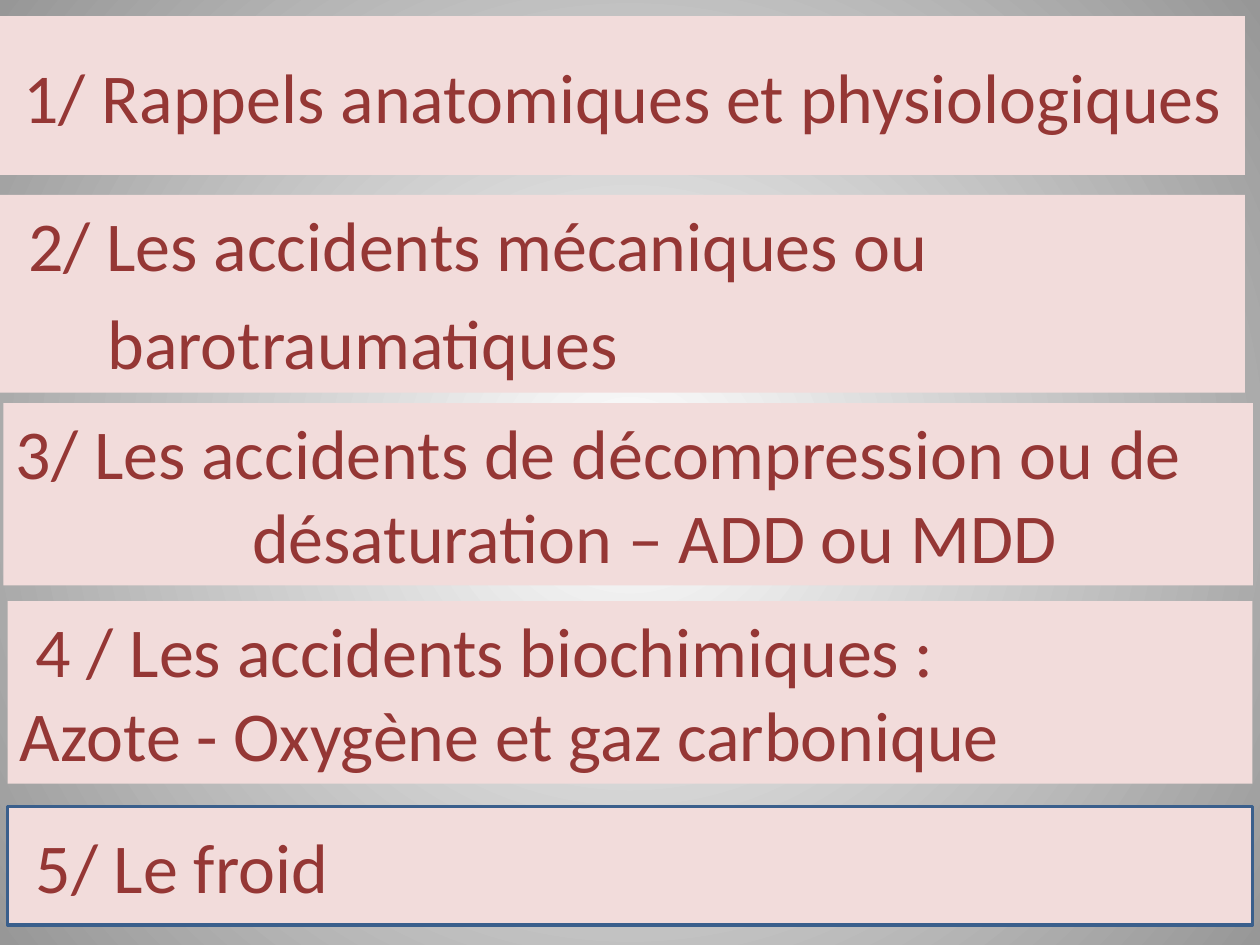
from lxml.etree import SubElement
from pptx import Presentation
from pptx.dml.color import RGBColor
from pptx.enum.shapes import MSO_SHAPE as SHAPE
from pptx.enum.text import MSO_ANCHOR as ANCHOR, PP_ALIGN as ALIGN
from pptx.oxml.ns import qn
from pptx.util import Pt

PINK, RED, BLUE = "F2DCDB", "953735", "3A5F8C"
BACKGROUND = [(0, "FFFFFF"), (1, "979797")]
TOP, MIDDLE = ANCHOR.TOP, ANCHOR.MIDDLE
LEFT, CENTER = ALIGN.LEFT, ALIGN.CENTER

# box, anchor, alignment, gap between lines, outline, [(indent, line)]
CHAPTERS = [
    ((0, 9.2, 711.4, 90.7), MIDDLE, CENTER, 0, None,
     [(0, "1/ Rappels anatomiques et physiologiques")]),
    ((0, 111.4, 711.4, 113), TOP, LEFT, 8, None,
     [(9, "2/ Les accidents mécaniques ou"), (54.3, "barotraumatiques")]),
    ((2, 230.4, 714, 104.2), TOP, LEFT, 0, None,
     [(0, "3/ Les accidents de décompression ou de"),
      (135, "désaturation – ADD ou MDD")]),
    ((4.3, 343.6, 711.4, 104.2), TOP, LEFT, 0, None,
     [(9, "4 / Les accidents biochimiques :"),
      (0, "Azote - Oxygène et gaz carbonique")]),
    ((4.3, 460.8, 711.4, 67.7), MIDDLE, LEFT, 0, BLUE, [(9, "5/ Le froid")]),
]


def color(value):
    return RGBColor.from_string(value)


def paint_background(s):
    fill = s.background.fill
    fill.gradient()
    for stop, (position, value) in zip(fill.gradient_stops, BACKGROUND):
        stop.position = position
        stop.color.rgb = color(value)
    grad = s.background._cSld.find(".//" + qn("a:gradFill"))
    grad.remove(grad.find(qn("a:lin")))
    circle = SubElement(grad, qn("a:path"), {"path": "circle"})
    SubElement(circle, qn("a:fillToRect"), dict.fromkeys("ltrb", "50000"))


def add_chapter(s, box, anchor, align, gap, outline, lines):
    sp = s.shapes.add_shape(SHAPE.RECTANGLE, *map(Pt, box))
    sp.shadow.inherit = False
    sp.fill.solid()
    sp.fill.fore_color.rgb = color(PINK)
    if outline:
        sp.line.color.rgb = color(outline)
        sp.line.width = Pt(2)
    else:
        sp.line.fill.background()
    tf = sp.text_frame
    tf.word_wrap = True
    tf.vertical_anchor = anchor
    tf.text = "\n".join(text for _, text in lines)
    for i, (p, (indent, _)) in enumerate(zip(tf.paragraphs, lines)):
        p._p.get_or_add_pPr().set("marL", str(Pt(indent)))
        p.alignment = align
        p.space_before = Pt(gap if i else 0)
        for r in p.runs:
            r.font.name = "Calibri"
            r.font.size = Pt(40)
            r.font.color.rgb = color(RED)


prs = Presentation()
prs.slide_width, prs.slide_height = Pt(720), Pt(540)
s = prs.slides.add_slide(prs.slide_layouts[6])
paint_background(s)
for chapter in CHAPTERS:
    add_chapter(s, *chapter)
prs.save("out.pptx")
